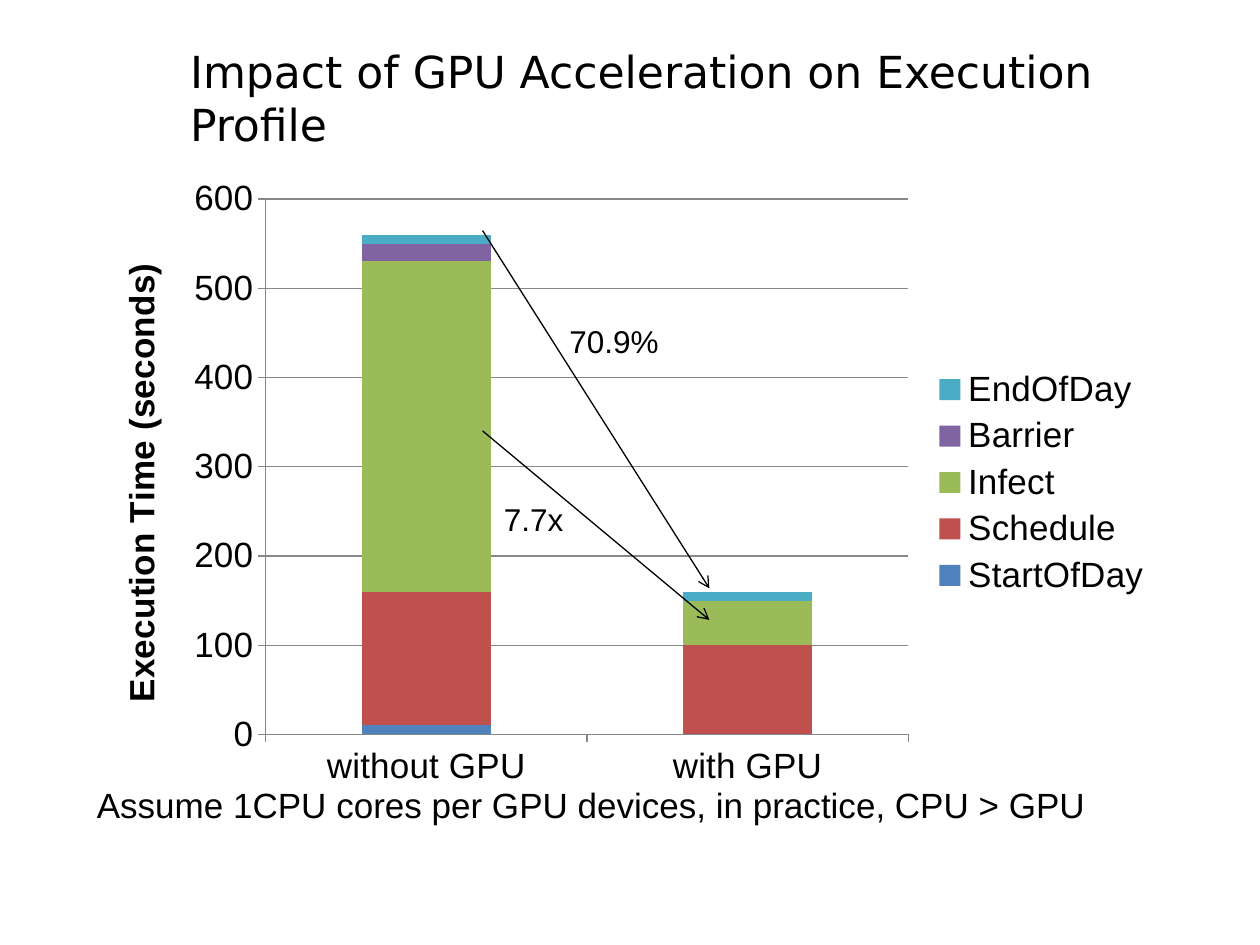
from lxml import etree
from pptx import Presentation
from pptx.chart.data import CategoryChartData
from pptx.dml.color import RGBColor
from pptx.enum.chart import XL_CHART_TYPE, XL_LEGEND_POSITION, XL_TICK_MARK
from pptx.enum.shapes import MSO_CONNECTOR
from pptx.enum.text import MSO_ANCHOR, MSO_AUTO_SIZE
from pptx.oxml import parse_xml
from pptx.oxml.ns import nsdecls, qn
from pptx.util import Inches, Pt

STACKED = XL_CHART_TYPE.COLUMN_STACKED
LEGEND_RIGHT = XL_LEGEND_POSITION.RIGHT
TICK_OUTSIDE = XL_TICK_MARK.OUTSIDE
STRAIGHT = MSO_CONNECTOR.STRAIGHT
TOP = MSO_ANCHOR.TOP
GROW = MSO_AUTO_SIZE.SHAPE_TO_FIT_TEXT
NO_GROW = MSO_AUTO_SIZE.NONE

COLORS = {
    "text": "000000",
    "grid": "878787",
    "StartOfDay": "4F81BD",
    "Schedule": "C0504D",
    "Infect": "9BBB59",
    "Barrier": "8064A2",
    "EndOfDay": "4BACC6",
}
CATEGORIES = ["without GPU", "with GPU"]
TIMES = {
    "StartOfDay": (10, 0),
    "Schedule": (150, 100),
    "Infect": (370, 50),
    "Barrier": (20, 0),
    "EndOfDay": (10, 10),
}
PLOT_AREA = {"x": 0.16, "y": 0.05, "w": 0.6, "h": 0.85}


def color(name):
    return RGBColor.from_string(COLORS[name])


def set_values(target, values):
    for name, value in values.items():
        setattr(target, name, value)


class SlideBuilder:
    def __init__(self, slide):
        self.slide = slide

    def style_font(self, font, size, name="Arial", bold=False):
        set_values(font, {"size": Pt(size), "name": name, "bold": bold})
        font.color.rgb = color("text")

    def style_line(self, line, name):
        line.color.rgb = color(name)
        line.width = Pt(0.75)

    def text(self, box, wording, size, name="Arial", wrap=True, fit=GROW):
        shape = self.slide.shapes.add_textbox(*map(Inches, box))
        frame = shape.text_frame
        set_values(frame, {"word_wrap": wrap, "auto_size": fit,
                           "vertical_anchor": TOP})
        paragraph = frame.paragraphs[0]
        run = paragraph.add_run()
        run.text = wording
        self.style_font(run.font, size, name)

    def arrow(self, start, end):
        connector = self.slide.shapes.add_connector(
            STRAIGHT, *map(Inches, start + end))
        self.style_line(connector.line, "text")
        line = connector.line._get_or_add_ln()
        etree.SubElement(line, qn("a:tailEnd"), type="arrow")
        etree.SubElement(connector._element.spPr, qn("a:effectLst"))

    def stacked_chart(self, box, categories, series_values, axis_title):
        data = CategoryChartData()
        data.categories = categories
        for name, values in series_values.items():
            data.add_series(name, values)
        chart = self.slide.shapes.add_chart(
            STACKED, *map(Inches, box), data).chart
        self.style_font(chart.font, 20)
        chart.has_title = False

        # Legend
        chart.has_legend = True
        set_values(chart.legend, {"position": LEGEND_RIGHT,
                                  "include_in_layout": False})

        # Columns
        plot = chart.plots[0]
        set_values(plot, {"gap_width": 150, "overlap": 100,
                          "vary_by_categories": False})
        for series in plot.series:
            series.format.fill.solid()
            series.format.fill.fore_color.rgb = color(series.name)

        # Axes
        value_axis = chart.value_axis
        set_values(value_axis, {"minimum_scale": 0, "maximum_scale": 600,
                                "major_unit": 100,
                                "has_major_gridlines": True})
        for axis in (chart.category_axis, value_axis):
            axis.major_tick_mark = TICK_OUTSIDE
            self.style_line(axis.format.line, "grid")
        self.style_line(value_axis.major_gridlines.format.line, "grid")
        title_frame = value_axis.axis_title.text_frame
        title_frame.text = axis_title
        self.style_font(title_frame.paragraphs[0].runs[0].font, 20, bold=True)
        self.place_plot(chart)

    def place_plot(self, chart):
        plot_area = chart._chartSpace.chart.plotArea
        for layout in plot_area.findall(qn("c:layout")):
            plot_area.remove(layout)
        modes = '<c:xMode val="edge"/><c:yMode val="edge"/>'
        sizes = "".join(f'<c:{key} val="{value}"/>'
                        for key, value in PLOT_AREA.items())
        plot_area.insert(0, parse_xml(
            f'<c:layout {nsdecls("c")}><c:manualLayout>'
            f'<c:layoutTarget val="inner"/>{modes}{sizes}'
            '</c:manualLayout></c:layout>'))


def main():
    presentation = Presentation()
    set_values(presentation, {"slide_width": Inches(10),
                              "slide_height": Inches(7.5)})
    builder = SlideBuilder(
        presentation.slides.add_slide(presentation.slide_layouts[6]))

    # Title
    builder.text((1.41, 0.3, 8.09, 0.71),
                 "Impact of GPU Acceleration on Execution Profile",
                 25.2, "DejaVu Sans", fit=NO_GROW)

    # Execution profile
    builder.stacked_chart((0.75, 1.33, 8.5, 5), CATEGORIES, TIMES,
                          "Execution Time (seconds)")

    # Speedup arrows and their labels
    builder.arrow((3.83, 1.83), (5.63, 4.67))
    builder.arrow((3.83, 3.42), (5.63, 4.92))
    builder.text((4.42, 2.51, 0.92, 0.4), "70.9%", 18, wrap=False)
    builder.text((3.9, 3.92, 0.68, 0.4), "7.7x", 18, wrap=False)

    # Footnote
    builder.text((0.67, 6.17, 9.33, 0.44),
                 "Assume 1CPU cores per GPU devices, in practice, CPU > GPU",
                 20)

    presentation.save("out.pptx")


if __name__ == "__main__":
    main()
